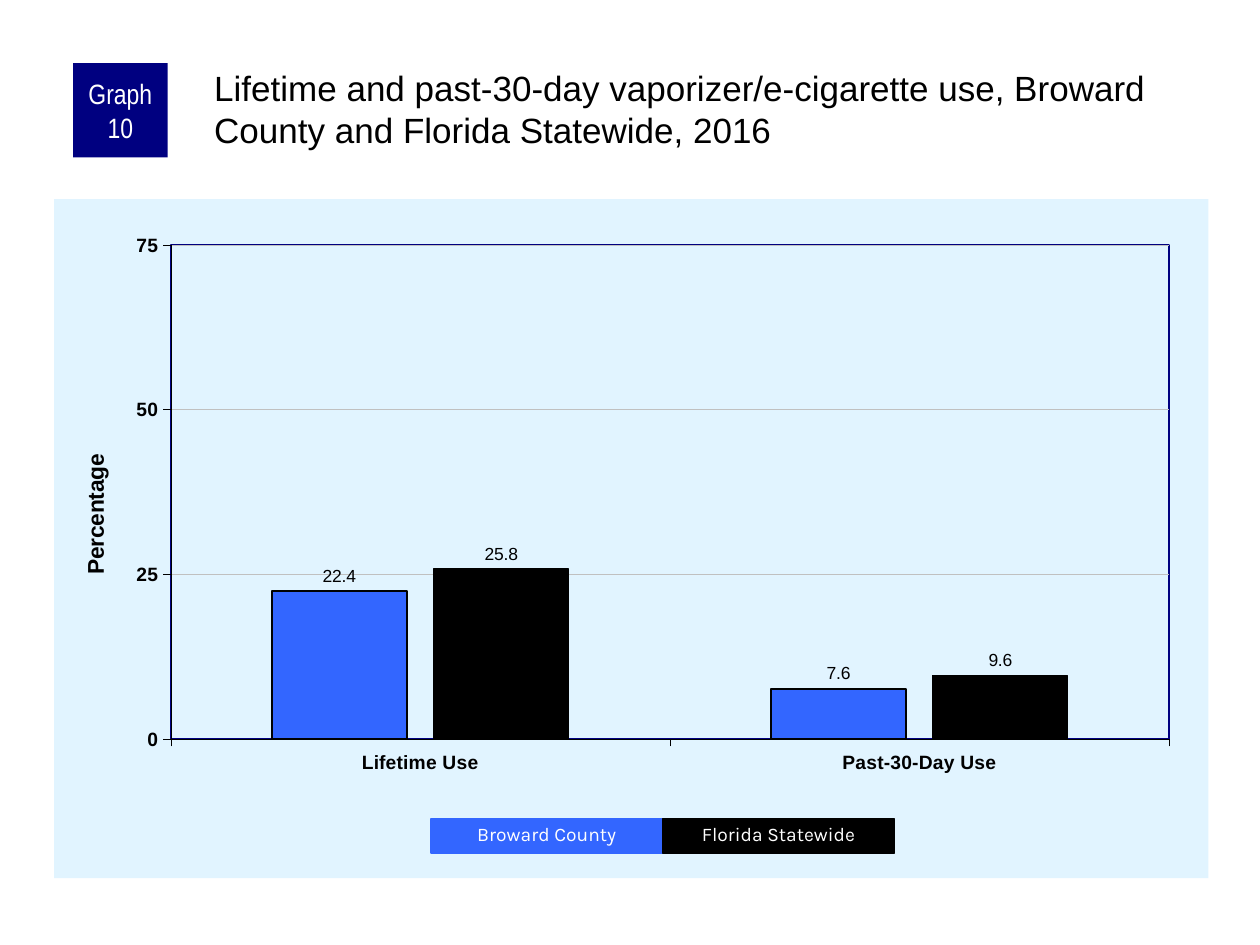
from dataclasses import dataclass

from pptx import Presentation
from pptx.chart.data import CategoryChartData
from pptx.dml.color import RGBColor
from pptx.enum.chart import XL_CHART_TYPE, XL_LABEL_POSITION, XL_TICK_MARK
from pptx.enum.shapes import MSO_SHAPE
from pptx.enum.text import MSO_ANCHOR, PP_ALIGN
from pptx.oxml import parse_xml
from pptx.oxml.ns import nsdecls, qn
from pptx.util import Inches, Pt


@dataclass(frozen=True)
class Theme:
    navy: str = "000080"
    blue: str = "3366FF"
    black: str = "000000"
    white: str = "FFFFFF"
    panel: str = "E1F4FF"
    grid: str = "C0C0C0"
    body_font: str = "Arial"
    badge_font: str = "Arial Narrow"
    legend_font: str = "Karla"
    title_size: float = 20
    badge_size: float = 16
    axis_title_size: float = 13
    axis_size: float = 11
    legend_size: float = 11
    label_size: float = 10


THEME = Theme()
CATEGORIES = ["Lifetime Use", "Past-30-Day Use"]
REGIONS = [
    ("Broward County", THEME.blue, 1, [22.4, 7.6]),
    ("Florida Statewide", THEME.black, 0.75, [25.8, 9.6]),
]


def apply(target, values):
    for attribute, value in values.items():
        setattr(target, attribute, value)


def style_font(font, name, size, color, bold=False):
    apply(font, {"name": name, "size": Pt(size), "bold": bold})
    font.color.rgb = RGBColor.from_string(color)


def style_line(line, color, width):
    line.color.rgb = RGBColor.from_string(color)
    line.width = Pt(width)


def fill_text(shape, text, font_format, paragraph_format, frame_format):
    frame = shape.text_frame
    apply(frame, {"word_wrap": True, **frame_format})
    paragraph = frame.paragraphs[0]
    apply(paragraph, paragraph_format)
    run = paragraph.add_run()
    run.text = text
    style_font(run.font, *font_format)


def add_block(slide, box, color):
    block = slide.shapes.add_shape(MSO_SHAPE.RECTANGLE, *map(Inches, box))
    block.shadow.inherit = False
    block.fill.solid()
    block.fill.fore_color.rgb = RGBColor.from_string(color)
    block.line.fill.background()
    return block


def add_badge(slide):
    badge = add_block(slide, (0.58, 0.5, 0.75, 0.75), THEME.navy)
    fill_text(
        badge, "Graph 10",
        (THEME.badge_font, THEME.badge_size, THEME.white),
        {"alignment": PP_ALIGN.CENTER},
        {"vertical_anchor": MSO_ANCHOR.MIDDLE,
         "margin_left": Inches(0.05), "margin_right": Inches(0.05),
         "margin_top": 0, "margin_bottom": 0},
    )


def add_title(slide):
    title = slide.shapes.add_textbox(*map(Inches, (1.67, 0.5, 7.92, 0.83)))
    fill_text(
        title,
        "Lifetime and past-30-day vaporizer/e-cigarette use, "
        "Broward County and Florida Statewide, 2016",
        (THEME.body_font, THEME.title_size, THEME.black),
        {"alignment": PP_ALIGN.LEFT},
        {"vertical_anchor": MSO_ANCHOR.TOP,
         "margin_left": Inches(0.03), "margin_right": 0,
         "margin_top": Inches(0.03), "margin_bottom": 0},
    )


def add_legend(slide):
    left, top, width, height = 3.42, 6.5, 1.84, 0.27
    for index, (region, color, _, _) in enumerate(REGIONS):
        key = add_block(slide, (left + index * width, top, width, height), color)
        style_line(key.line, color, 0.75)
        fill_text(
            key, region,
            (THEME.legend_font, THEME.legend_size, THEME.white),
            {"alignment": PP_ALIGN.CENTER, "line_spacing": 0.9},
            {"vertical_anchor": MSO_ANCHOR.TOP},
        )


def set_layout(element, index, inner=False, **fractions):
    """Place a chart part by fractions of the chart's width and height."""
    for existing in element.findall(qn("c:layout")):
        element.remove(existing)
    target = '<c:layoutTarget val="inner"/>' if inner else ""
    modes = '<c:xMode val="edge"/><c:yMode val="edge"/>'
    sizes = "".join(f'<c:{key} val="{value}"/>' for key, value in fractions.items())
    element.insert(index, parse_xml(
        f'<c:layout {nsdecls("c")}><c:manualLayout>{target}{modes}{sizes}'
        "</c:manualLayout></c:layout>"))


def area_format(fill, line):
    return parse_xml(
        f'<c:spPr {nsdecls("c", "a")}>{fill}<a:ln w="12700">{line}</a:ln></c:spPr>')


def solid(color):
    return f'<a:solidFill><a:srgbClr val="{color}"/></a:solidFill>'


def style_axes(chart):
    for axis in (chart.category_axis, chart.value_axis):
        apply(axis, {"major_tick_mark": XL_TICK_MARK.OUTSIDE,
                     "minor_tick_mark": XL_TICK_MARK.NONE})
        style_font(axis.tick_labels.font, THEME.body_font, THEME.axis_size,
                   THEME.black, True)
        style_line(axis.format.line, THEME.black, 0.25)
    percentage = chart.value_axis
    apply(percentage, {"minimum_scale": 0, "maximum_scale": 75, "major_unit": 25,
                       "has_major_gridlines": True})
    apply(percentage.tick_labels, {"number_format": "0",
                                   "number_format_is_linked": False})
    style_line(percentage.major_gridlines.format.line, THEME.grid, 0.25)
    title = percentage.axis_title
    title.text_frame.text = "Percentage"
    style_font(title.text_frame.paragraphs[0].runs[0].font, THEME.body_font,
               THEME.axis_title_size, THEME.black, True)
    set_layout(title._element, 1, x=0.02, y=0.37)


def style_bars(plot):
    apply(plot, {"gap_width": 150, "overlap": -20, "vary_by_categories": False})
    for series, (_, color, line_width, _) in zip(plot.series, REGIONS):
        series.format.fill.solid()
        series.format.fill.fore_color.rgb = RGBColor.from_string(color)
        style_line(series.format.line, THEME.black, line_width)
        labels = series.data_labels
        apply(labels, {"show_value": True, "number_format": "0.0",
                       "number_format_is_linked": False,
                       "position": XL_LABEL_POSITION.OUTSIDE_END})
        style_font(labels.font, THEME.body_font, THEME.label_size, THEME.black)


def add_use_chart(slide):
    data = CategoryChartData(number_format="0.0")
    data.categories = CATEGORIES
    for region, _, _, values in REGIONS:
        data.add_series(region, values)
    chart = slide.shapes.add_chart(
        XL_CHART_TYPE.COLUMN_CLUSTERED,
        *map(Inches, (0.43, 1.58, 9.16, 5.39)), data).chart
    apply(chart, {"has_legend": False, "has_title": False})
    style_font(chart.font, THEME.body_font, THEME.axis_size, THEME.black)
    style_axes(chart)
    style_bars(chart.plots[0])

    space = chart._chartSpace
    space.find(qn("c:chart")).addnext(
        area_format(solid(THEME.panel), "<a:noFill/>"))
    plot_area = space.chart.plotArea
    set_layout(plot_area, 0, inner=True, x=0.101, y=0.068, w=0.865, h=0.727)
    plot_area.append(area_format("<a:noFill/>", solid(THEME.navy)))


def main():
    presentation = Presentation()
    apply(presentation, {"slide_width": Inches(10), "slide_height": Inches(7.5)})
    slide = presentation.slides.add_slide(presentation.slide_layouts[6])
    add_use_chart(slide)
    add_badge(slide)
    add_title(slide)
    add_legend(slide)
    presentation.save("out.pptx")


if __name__ == "__main__":
    main()
